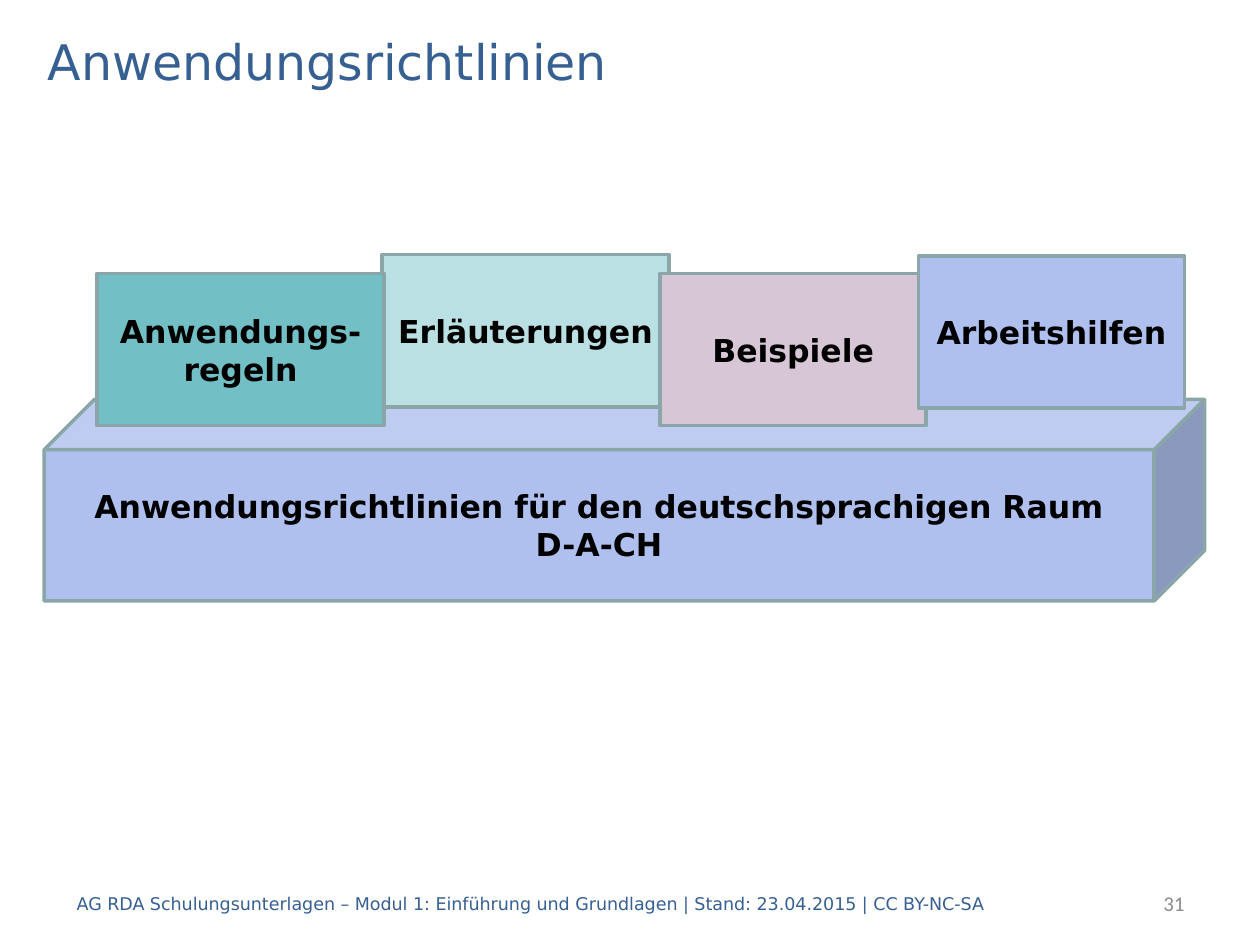
import dataclasses
import typing

import pptx
import pptx.dml.color
import pptx.enum.shapes
import pptx.enum.text
import pptx.util

Pt = pptx.util.Pt
Align = pptx.enum.text.PP_ALIGN
Preset = pptx.enum.shapes.MSO_SHAPE

COLOURS = {
    "heading": "376092",
    "number": "8C8C8C",
    "label": "000000",
    "outline": "8AA6A8",
    "blue": "AFC0EF",
    "aqua": "BBE0E3",
    "mauve": "D7C7D6",
    "teal": "72BFC5",
}
FRAME_FORMAT = {
    "word_wrap": True,
    "auto_size": pptx.enum.text.MSO_AUTO_SIZE.NONE,
    "vertical_anchor": pptx.enum.text.MSO_ANCHOR.MIDDLE,
    "margin_left": Pt(7.2),
    "margin_right": Pt(7.2),
    "margin_top": Pt(3.6),
    "margin_bottom": Pt(3.6),
}


@dataclasses.dataclass(frozen=True)
class Box:
    left: float
    top: float
    width: float
    height: float

    def lengths(self) -> tuple[int, ...]:
        return tuple(Pt(length) for length in dataclasses.astuple(self))


@dataclasses.dataclass(frozen=True)
class TextStyle:
    size: float
    colour: str
    font: str = "DejaVu Sans"
    bold: bool = False
    align: Align = Align.LEFT


@dataclasses.dataclass(frozen=True)
class Block:
    lines: tuple[str, ...]
    box: Box
    colour: str
    preset: Preset = Preset.RECTANGLE


def rgb(name: str) -> pptx.dml.color.RGBColor:
    return pptx.dml.color.RGBColor.from_string(COLOURS[name])


def apply(target: typing.Any, values: dict[str, typing.Any]) -> None:
    for attribute, value in values.items():
        setattr(target, attribute, value)


def write(shape: typing.Any, lines: tuple[str, ...], style: TextStyle) -> None:
    frame = shape.text_frame
    apply(frame, FRAME_FORMAT)
    frame.text = "\n".join(lines)
    font_format = {"name": style.font, "size": Pt(style.size), "bold": style.bold}
    for paragraph in frame.paragraphs:
        paragraph.alignment = style.align
        for run in paragraph.runs:
            apply(run.font, font_format)
            run.font.color.rgb = rgb(style.colour)


def draw_block(shapes: typing.Any, block: Block) -> None:
    shape = shapes.add_shape(block.preset, *block.box.lengths())
    shape.shadow.inherit = False
    shape.fill.solid()
    shape.fill.fore_color.rgb = rgb(block.colour)
    shape.line.color.rgb = rgb("outline")
    shape.line.width = Pt(2)
    write(shape, block.lines, BLOCK_STYLE)


def draw_text(shapes: typing.Any, text: str, box: Box, style: TextStyle) -> None:
    write(shapes.add_textbox(*box.lengths()), (text,), style)


TITLE_BOX = Box(20.2, 14.4, 680.4, 40.3)
TITLE_STYLE = TextStyle(28, "heading")
BLOCK_STYLE = TextStyle(18, "label", bold=True, align=Align.CENTER)
FOOTER_TOP, FOOTER_HEIGHT = 501.8, 28.8
WIDE, NARROW, BLOCK_HEIGHT = 164.2, 151.9, 87.1
FRONT_TOP = 156.2

BLOCKS = (
    Block(
        ("Anwendungsrichtlinien für den deutschsprachigen Raum", "D-A-CH"),
        Box(25.2, 228.2, 663.1, 115.2),
        "blue",
        Preset.CUBE,
    ),
    Block(("Erläuterungen",), Box(218.2, 145.4, WIDE, BLOCK_HEIGHT), "aqua"),
    Block(("Beispiele",), Box(377.3, FRONT_TOP, NARROW, BLOCK_HEIGHT), "mauve"),
    Block(("Arbeitshilfen",), Box(524.9, 146.2, NARROW, BLOCK_HEIGHT), "blue"),
    Block(("Anwendungs-regeln",), Box(55.4, FRONT_TOP, WIDE, BLOCK_HEIGHT), "teal"),
)


def main() -> None:
    presentation = pptx.Presentation()
    apply(presentation, {"slide_width": Pt(720), "slide_height": Pt(540)})
    slide = presentation.slides.add_slide(presentation.slide_layouts[5])

    title = slide.shapes.title
    apply(title, dict(zip(("left", "top", "width", "height"), TITLE_BOX.lengths())))
    write(title, ("Anwendungsrichtlinien",), TITLE_STYLE)

    draw_text(
        slide.shapes,
        "31",
        Box(569.5, FOOTER_TOP, 114.5, FOOTER_HEIGHT),
        TextStyle(12, "number", font="Calibri", align=Align.RIGHT),
    )
    draw_text(
        slide.shapes,
        "AG RDA Schulungsunterlagen – Modul 1: Einführung und Grundlagen"
        " | Stand: 23.04.2015 | CC BY-NC-SA",
        Box(36.7, FOOTER_TOP, 572.4, FOOTER_HEIGHT),
        TextStyle(10, "heading"),
    )

    guidelines = slide.shapes.add_group_shape()
    for block in BLOCKS:
        draw_block(guidelines.shapes, block)

    presentation.save("out.pptx")


if __name__ == "__main__":
    main()
